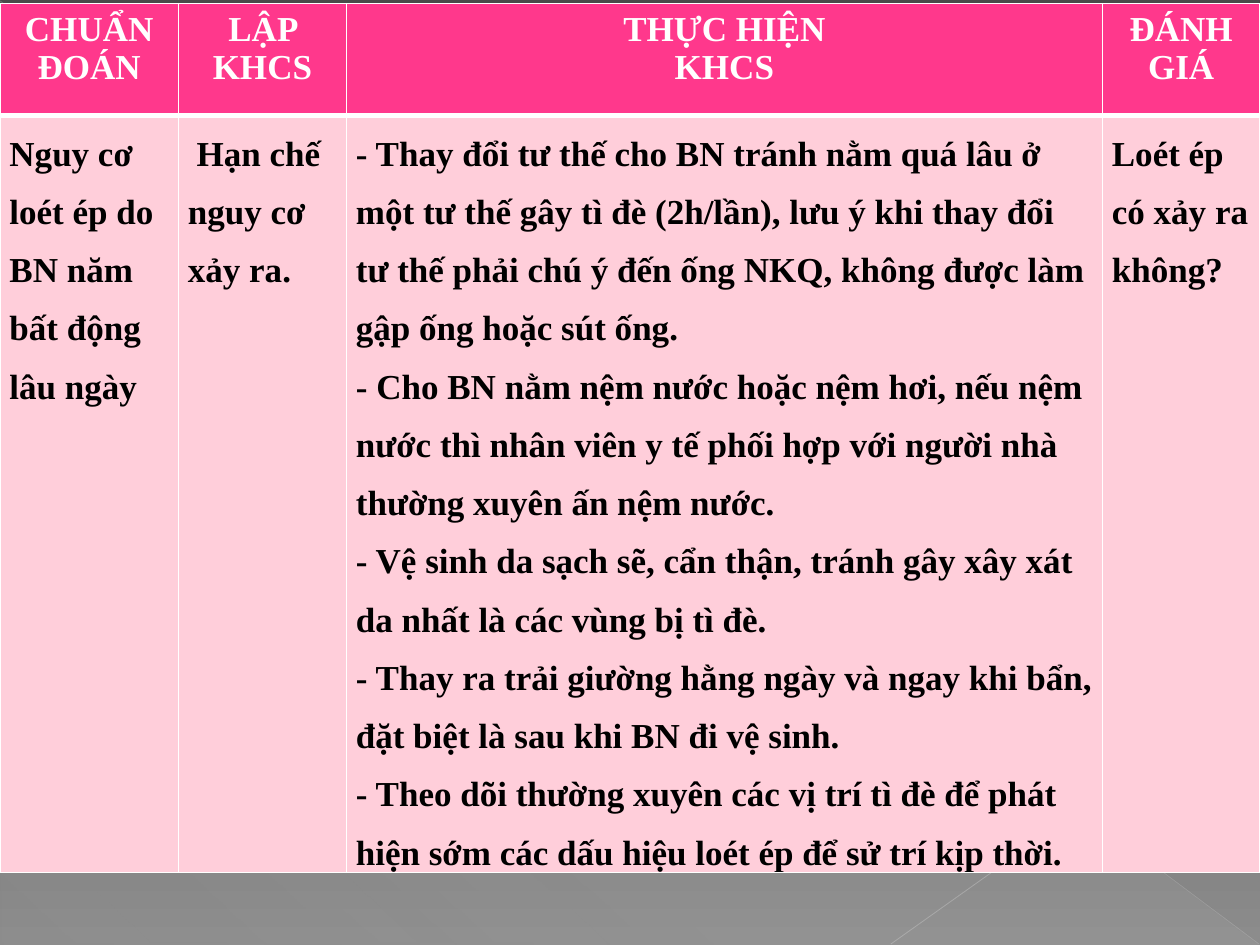
from lxml import etree
from pptx import Presentation
from pptx.dml.color import RGBColor
from pptx.enum import shapes, text
from pptx.oxml import ns, parse_xml
from pptx.util import Pt

FONT = "Times New Roman"
COLORS = {
    "header": "FF388C", "body": "FFCEDA", "white": "FFFFFF", "black": "000000",
    "dark": "4A4A4A", "middle": "626262", "light": "8C8C8C",
    "sheen": "D2D2D2", "long line": "BFBFBF", "short line": "C6C6C6",
}
COLUMN_WIDTHS = [102, 96, 432, 90]
ROW_HEIGHTS = [64, 179]
HEADERS = [["CHUẨN ĐOÁN"], ["LẬP KHCS"], ["THỰC HIỆN", "KHCS"], ["ĐÁNH GIÁ"]]
BODY = [
    ["Nguy cơ loét ép do BN năm bất động lâu ngày"],
    [" Hạn chế nguy cơ xảy ra."],
    [
        "- Thay đổi tư thế cho BN tránh nằm quá lâu ở một tư thế gây tì đè (2h/lần), "
        "lưu ý khi thay đổi tư thế phải chú ý đến ống NKQ, không được làm gập ống "
        "hoặc sút ống.",
        "- Cho BN nằm nệm nước hoặc nệm hơi, nếu nệm nước thì nhân viên y tế phối hợp "
        "với người nhà thường xuyên ấn nệm nước.",
        "- Vệ sinh da sạch sẽ, cẩn thận, tránh gây xây xát da nhất là các vùng bị tì đè.",
        "- Thay ra trải giường hằng ngày và ngay khi bẩn, đặt biệt là sau khi BN đi "
        "vệ sinh.",
        "- Theo dõi thường xuyên các vị trí tì đè để phát hiện sớm các dấu hiệu loét ép "
        "để sử trí kịp thời.",
    ],
    ["Loét ép có xảy ra không?"],
]


def color(name):
    return RGBColor.from_string(COLORS[name])


def set_gradient(fill, element, stops, angle):
    """Fill with (position %, colour name, opacity %) stops."""
    fill.solid()
    solid = next(element.iter(ns.qn("a:solidFill")))
    stop_xml = "".join(
        f'<a:gs pos="{position * 1000}"><a:srgbClr val="{COLORS[name]}">'
        f'<a:alpha val="{opacity * 1000}"/></a:srgbClr></a:gs>'
        for position, name, opacity in stops)
    gradient = parse_xml(
        f'<a:gradFill {ns.nsdecls("a")} rotWithShape="1"><a:gsLst>{stop_xml}</a:gsLst>'
        f'<a:lin ang="{angle * 60000}" scaled="0"/></a:gradFill>')
    solid.getparent().replace(solid, gradient)


def add_sheen(slide):
    triangle = slide.shapes.add_shape(
        shapes.MSO_SHAPE.RIGHT_TRIANGLE, Pt(0.5), Pt(1.5), Pt(719), Pt(538.5))
    triangle.shadow.inherit = False
    triangle.line.fill.background()
    stops = [(0, "sheen", 10), (70, "sheen", 8), (100, "sheen", 1)]
    set_gradient(triangle.fill, triangle.element, stops, 133)


def add_line(slide, start, end, name, width, opacity):
    line = slide.shapes.add_connector(
        shapes.MSO_CONNECTOR.STRAIGHT, *map(Pt, start + end))
    line.line.color.rgb = color(name)
    line.line.width = Pt(width)
    rgb = next(line.element.spPr.iter(ns.qn("a:srgbClr")))
    etree.SubElement(rgb, ns.qn("a:alpha"), val=str(opacity * 1000))
    etree.SubElement(line.element.spPr, ns.qn("a:effectLst"))


def set_borders(cell, bottom_width):
    properties = cell._tc.get_or_add_tcPr()
    widths = [("lnL", 1), ("lnR", 1), ("lnT", 1), ("lnB", bottom_width)]
    for index, (side, width) in enumerate(widths):
        properties.insert(index, parse_xml(
            f'<a:{side} {ns.nsdecls("a")} w="{Pt(width)}"><a:solidFill>'
            f'<a:srgbClr val="{COLORS["white"]}"/></a:solidFill>'
            f'<a:prstDash val="solid"/></a:{side}>'))


def fill_cell(cell, lines, is_header):
    cell.fill.solid()
    cell.fill.fore_color.rgb = color("header" if is_header else "body")
    set_borders(cell, 3 if is_header else 1)
    if not is_header:
        cell.margin_left = cell.margin_right = Pt(5.4)
        cell.margin_top = cell.margin_bottom = 0
    for index, line in enumerate(lines):
        frame = cell.text_frame
        paragraph = frame.add_paragraph() if index else frame.paragraphs[0]
        if is_header:
            paragraph.alignment = text.PP_ALIGN.CENTER
        else:
            paragraph.line_spacing = 1.5
        run = paragraph.add_run()
        run.text = line
        run.font.name = FONT
        run.font.size = Pt(20)
        run.font.bold = True
        run.font.color.rgb = color("white" if is_header else "black")


def add_care_table(slide):
    rows = [HEADERS, BODY]
    frame = slide.shapes.add_table(
        len(rows), len(COLUMN_WIDTHS), 0, Pt(2), Pt(720), Pt(528))
    table = frame.table
    for column, width in zip(table.columns, COLUMN_WIDTHS):
        column.width = Pt(width)
    for row, height in zip(table.rows, ROW_HEIGHTS):
        row.height = Pt(height)
    frame.height = Pt(528)
    for row_index, row in enumerate(rows):
        for column_index, lines in enumerate(row):
            fill_cell(table.cell(row_index, column_index), lines, row_index == 0)


def main():
    presentation = Presentation()
    presentation.slide_width, presentation.slide_height = Pt(720), Pt(540)
    slide = presentation.slides.add_slide(presentation.slide_layouts[6])

    # Background with its sheen and thin diagonals
    stops = [(0, "dark", 100), (60, "middle", 100), (100, "light", 100)]
    set_gradient(slide.background.fill, slide.element, stops, 90)
    add_sheen(slide)
    add_line(slide, (0, 0.5), (719.5, 539.5), "long line", 0.39, 35)
    add_line(slide, (720, 389.5), (509, 539.5), "short line", 0.47, 45)

    # Care plan table
    add_care_table(slide)
    presentation.save("out.pptx")


if __name__ == "__main__":
    main()
